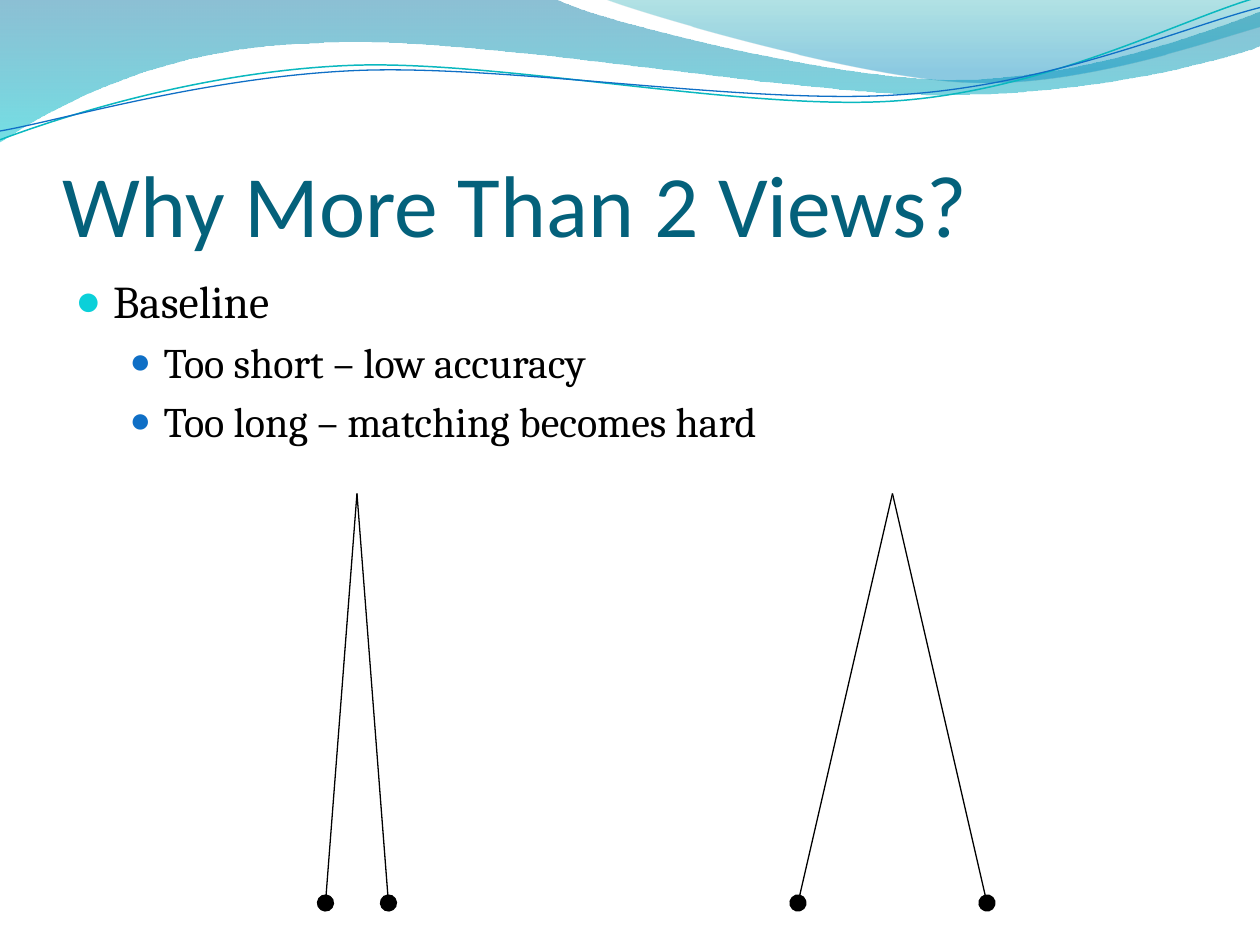
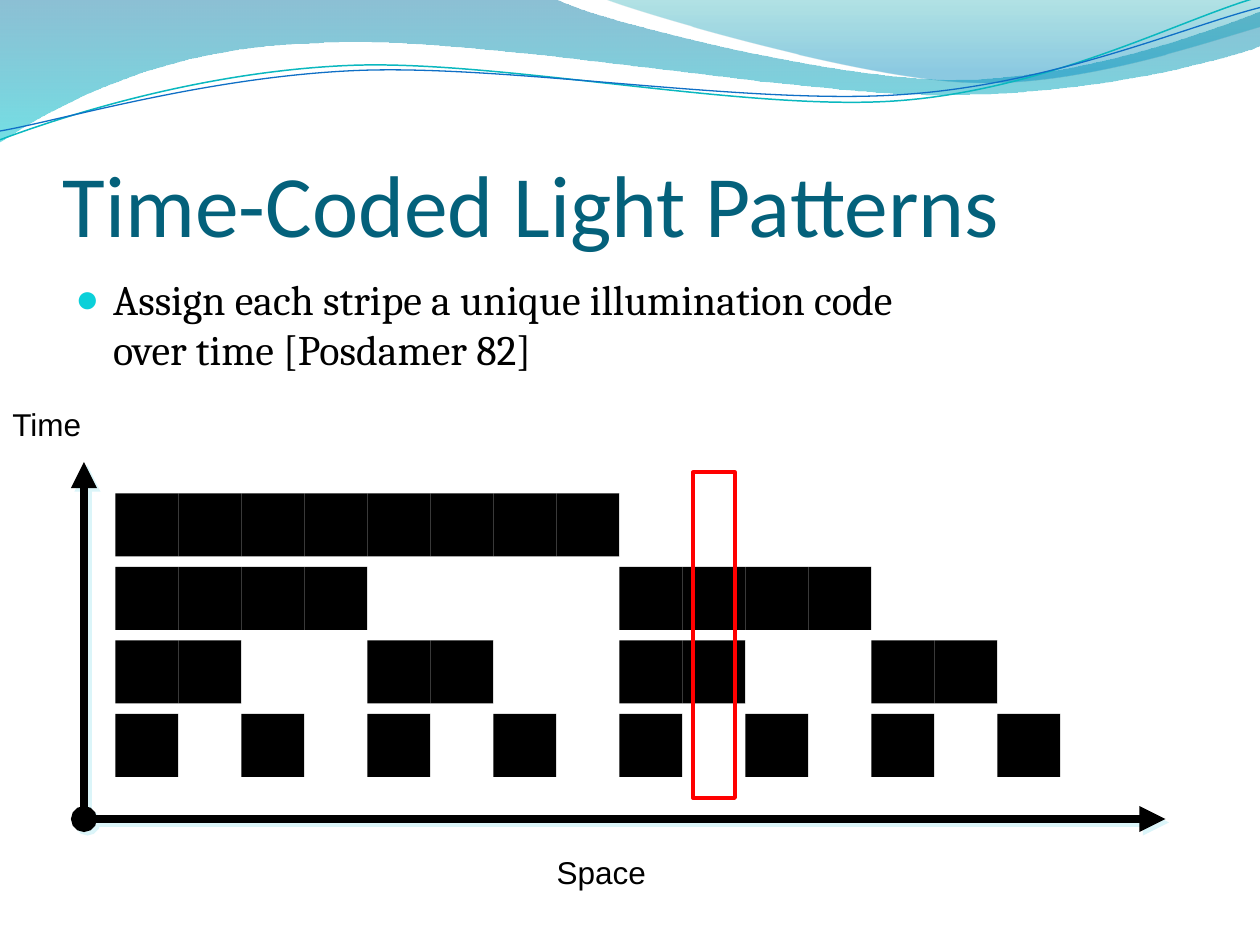
import pptx
import pptx.dml.color
import pptx.enum.shapes
import pptx.enum.text
import pptx.oxml
import pptx.oxml.ns
import pptx.util
from dataclasses import dataclass
from lxml import etree

Inches = pptx.util.Inches
Pt = pptx.util.Pt
qn = pptx.oxml.ns.qn


@dataclass(frozen=True)
class Theme:
    title_font: str = "Calibri"
    body_font: str = "Cambria"
    label_font: str = "Arial"
    title_size: float = 50
    label_size: float = 18
    title: str = "04617B"
    ink: str = "000000"
    paper: str = "FFFFFF"
    highlight: str = "FF0000"
    axis_shadow: str = "DBF5F9"
    bullets: tuple = (("0BD0D9", 95), ("0F6FC6", 85))


THEME = Theme()

# Slide text: (level, size, wording)
BASELINE_TITLE = "Why More Than 2 Views?"
BASELINE_BODY = [
    (0, 26, "Baseline"),
    (1, 24, "Too short – low accuracy"),
    (1, 24, "Too long – matching becomes hard"),
]
PATTERN_TITLE = "Time-Coded Light Patterns"
PATTERN_BODY = [
    (0, 24, "Assign each stripe a unique illumination code\nover time [Posdamer 82]"),
]
AXIS_LABELS = [("Space", (4.32, 6.72, 1.04, 0.5)), ("Time", (0, 19 / 6, 0.91, 0.5))]

TITLE_BOX = (0.5, 0.77, 9, 1.25)
BODY_BOX = (0.5, 2.12, 9, 4.8)
LEVEL_INDENTS = [(0.3, -0.3), (0.7, -0.27)]

# Camera pairs: (centre, half of the baseline), on a grid of twelfths of an inch
CAMERA_PAIRS = [(34 / 12, 0.25), (85 / 12, 0.75)]
POINT_Y, CAMERA_Y = 47 / 12, 86 / 12

CODE_BITS = 4
CELL = 0.5
CODE_LEFT, CODE_TOP, CODE_PITCH = 11 / 12, 47 / 12, 7 / 12
STRIPE_BOX = (5.5, 3.75, 4 / 12, 31 / 12)
ORIGIN, TIME_END, SPACE_END = (8 / 12, 6.5), (8 / 12, 44 / 12), (9.25, 6.5)

# Wave outlines: a start point, then steps of one point (line) or three (curve)
WAVE_BANDS = [
    {"start": (0, 0),
     "steps": [[(4.4, -0.01)],
               [(4.76, 0.17), (6.64, 0.63), (7.58, 0.63)],
               [(8.53, 0.63), (9.58, 0.26), (10, 0.09)],
               [(10.01, 0.36)],
               [(9.83, 0.44), (8.7, 0.76), (7.46, 0.75)],
               [(6.22, 0.75), (3.82, 0.28), (2.57, 0.34)],
               [(1.29, 0.36), (0.46, 0.83), (-0.01, 1.13)],
               [(0, 0)]],
     "stops": [(0, "0074A1", 45), (1, "00C6CF", 55)]},
    {"start": (4.79, -0.01),
     "steps": [[(5.09, 0.11), (6.82, 0.62), (7.69, 0.65)],
               [(8.56, 0.69), (9.61, 0.32), (10, 0.21)],
               [(10, 0)],
               [(4.79, -0.01)]],
     "stops": [(0, "00A1A9", 30), (0.8, "008BBF", 45)]},
]
WAVE_LINES = [
    {"start": (0, 1.11),
     "steps": [[(0.48, 0.93), (1.58, 0.57), (2.77, 0.52)],
               [(3.95, 0.47), (5.93, 0.89), (7.13, 0.8)],
               [(8.33, 0.71), (9.38, 0.15), (9.98, -0.02)]],
     "line": ("0AB8BF", 0.85)},
    {"start": (0, 1.04),
     "steps": [[(0.47, 0.96), (1.64, 0.61), (2.83, 0.56)],
               [(4.03, 0.51), (5.97, 0.84), (7.17, 0.75)],
               [(8.36, 0.67), (9.41, 0.21), (10, 0.06)]],
     "line": ("0F6FC6", 0.75)},
]


def rgb(value):
    return pptx.dml.color.RGBColor.from_string(value)


def inches(values):
    return [Inches(value) for value in values]


def add_element(parent, tag, **attributes):
    values = {name: str(value) for name, value in attributes.items()}
    return etree.SubElement(parent, qn(tag), values)


def set_line(shape, color, width):
    shape.line.color.rgb = rgb(color)
    shape.line.width = Pt(width)


def add_bullet(paragraph, level):
    color, percent = THEME.bullets[level]
    margin, indent = LEVEL_INDENTS[level]
    properties = paragraph._p.get_or_add_pPr()
    properties.set("marL", str(Inches(margin)))
    properties.set("indent", str(Inches(indent)))
    add_element(add_element(properties, "a:buClr"), "a:srgbClr", val=color)
    add_element(properties, "a:buSzPct", val=percent * 1000)
    add_element(properties, "a:buFont", typeface="Arial")
    add_element(properties, "a:buChar", char="●")


def add_text(slide, box, items, font, color=THEME.ink, bulleted=False,
             wrap=True, anchor="TOP", insets=(0.1, 0.05, 0.1, 0.05)):
    """Add a text box; items are (level, size, wording)."""
    frame = slide.shapes.add_textbox(*inches(box)).text_frame
    frame.word_wrap = wrap
    frame.vertical_anchor = pptx.enum.text.MSO_ANCHOR[anchor]
    (frame.margin_left, frame.margin_top,
     frame.margin_right, frame.margin_bottom) = inches(insets)
    for index, (level, size, wording) in enumerate(items):
        paragraph = frame.add_paragraph() if index else frame.paragraphs[0]
        paragraph.text = wording
        paragraph.level = level
        if index:
            paragraph.space_before = Pt(0.2 * size)
        if bulleted:
            add_bullet(paragraph, level)
        for run in paragraph.runs:
            run.font.name = font
            run.font.size = Pt(size)
            run.font.color.rgb = rgb(color)


def add_outline(slide, wave, close):
    """Draw a wave outline, joining each step of three points into one curve."""
    builder = slide.shapes.build_freeform(*inches(wave["start"]))
    for step in wave["steps"]:
        builder.add_line_segments([inches(point) for point in step], close=False)
    shape = builder.convert_to_shape()
    shape.shadow.inherit = False
    outline = next(shape._element.iter(qn("a:path")))
    segments = iter(outline.findall(qn("a:lnTo")))
    for step in wave["steps"]:
        parts = [next(segments) for _ in step]
        if len(parts) == 3:
            curve = etree.Element(qn("a:cubicBezTo"))
            parts[0].addprevious(curve)
            for part in parts:
                curve.append(part[0])
                outline.remove(part)
    if close:
        add_element(outline, "a:close")
    return shape


def add_waves(slide, master):
    """Draw the waves and hand them to the master, which every slide shows."""
    shapes = []
    for wave in WAVE_BANDS:
        band = add_outline(slide, wave, close=True)
        band.line.fill.background()
        band.fill.gradient()
        band.fill.gradient_angle = 270
        for stop, (position, color, opacity) in zip(band.fill.gradient_stops, wave["stops"]):
            stop.position = position
            stop.color.rgb = rgb(color)
            add_element(stop._gs.find(qn("a:srgbClr")), "a:alpha", val=opacity * 1000)
        shapes.append(band)
    for wave in WAVE_LINES:
        line = add_outline(slide, wave, close=False)
        line.fill.background()
        set_line(line, *wave["line"])
        shapes.append(line)
    for number, shape in enumerate(shapes):
        shape._element.nvSpPr.cNvPr.set("id", str(100 + number))
        master.shapes._spTree.append(shape._element)


def add_line(slide, start, end, width, head=None, tail=None, end_size="med", shadow=None):
    connector = slide.shapes.add_connector(
        pptx.enum.shapes.MSO_CONNECTOR.STRAIGHT, *inches(start + end))
    set_line(connector, THEME.ink, width)
    outline = connector.line._get_or_add_ln()
    for tag, kind in (("a:headEnd", head), ("a:tailEnd", tail)):
        if kind:
            add_element(outline, tag, type=kind, w=end_size, len=end_size)
    effects = add_element(connector._element.spPr, "a:effectLst")
    if shadow:
        outer = add_element(effects, "a:outerShdw", blurRad=0, dist=Pt(2.8),
                            dir=45 * 60000, algn="ctr", rotWithShape=0)
        add_element(outer, "a:srgbClr", val=shadow)


def add_rectangle(slide, box, fill=None, line=None):
    shape = slide.shapes.add_shape(pptx.enum.shapes.MSO_SHAPE.RECTANGLE, *inches(box))
    shape.shadow.inherit = False
    if fill:
        shape.fill.solid()
        shape.fill.fore_color.rgb = rgb(fill)
    else:
        shape.fill.background()
    if line:
        set_line(shape, *line)
    else:
        shape.line.fill.background()


def add_content_slide(presentation, title, body):
    slide = presentation.slides.add_slide(presentation.slide_layouts[6])
    add_text(slide, TITLE_BOX, [(0, THEME.title_size, title)], THEME.title_font,
             color=THEME.title, anchor="BOTTOM", insets=(0, 0.05, 0, 0))
    add_text(slide, BODY_BOX, body, THEME.body_font, bulleted=True)
    return slide


def add_baseline_slide(presentation):
    slide = add_content_slide(presentation, BASELINE_TITLE, BASELINE_BODY)
    for centre, half_baseline in CAMERA_PAIRS:
        for side in (-1, 1):
            camera = (centre + side * half_baseline, CAMERA_Y)
            add_line(slide, camera, (centre, POINT_Y), 0.75, head="oval", end_size="lg")
    return slide


def add_pattern_slide(presentation):
    slide = add_content_slide(presentation, PATTERN_TITLE, PATTERN_BODY)
    for row in range(CODE_BITS):
        for column in range(2 ** CODE_BITS):
            lit = column >> (CODE_BITS - 1 - row) & 1
            add_rectangle(slide, (CODE_LEFT + column * CELL, CODE_TOP + row * CODE_PITCH, CELL, CELL),
                          fill=THEME.paper if lit else THEME.ink)
    add_line(slide, ORIGIN, TIME_END, 5, tail="triangle", shadow=THEME.axis_shadow)
    for label, box in AXIS_LABELS:
        add_text(slide, box, [(0, THEME.label_size, label)], THEME.label_font, wrap=False)
    add_rectangle(slide, STRIPE_BOX, line=(THEME.highlight, 2.25))
    add_line(slide, ORIGIN, SPACE_END, 5, head="oval", tail="triangle", shadow=THEME.axis_shadow)


def main():
    presentation = pptx.Presentation()
    presentation.slide_width, presentation.slide_height = inches((10, 7.5))
    baseline_slide = add_baseline_slide(presentation)
    add_waves(baseline_slide, presentation.slide_master)
    add_pattern_slide(presentation)
    presentation.save("out.pptx")


if __name__ == "__main__":
    main()
